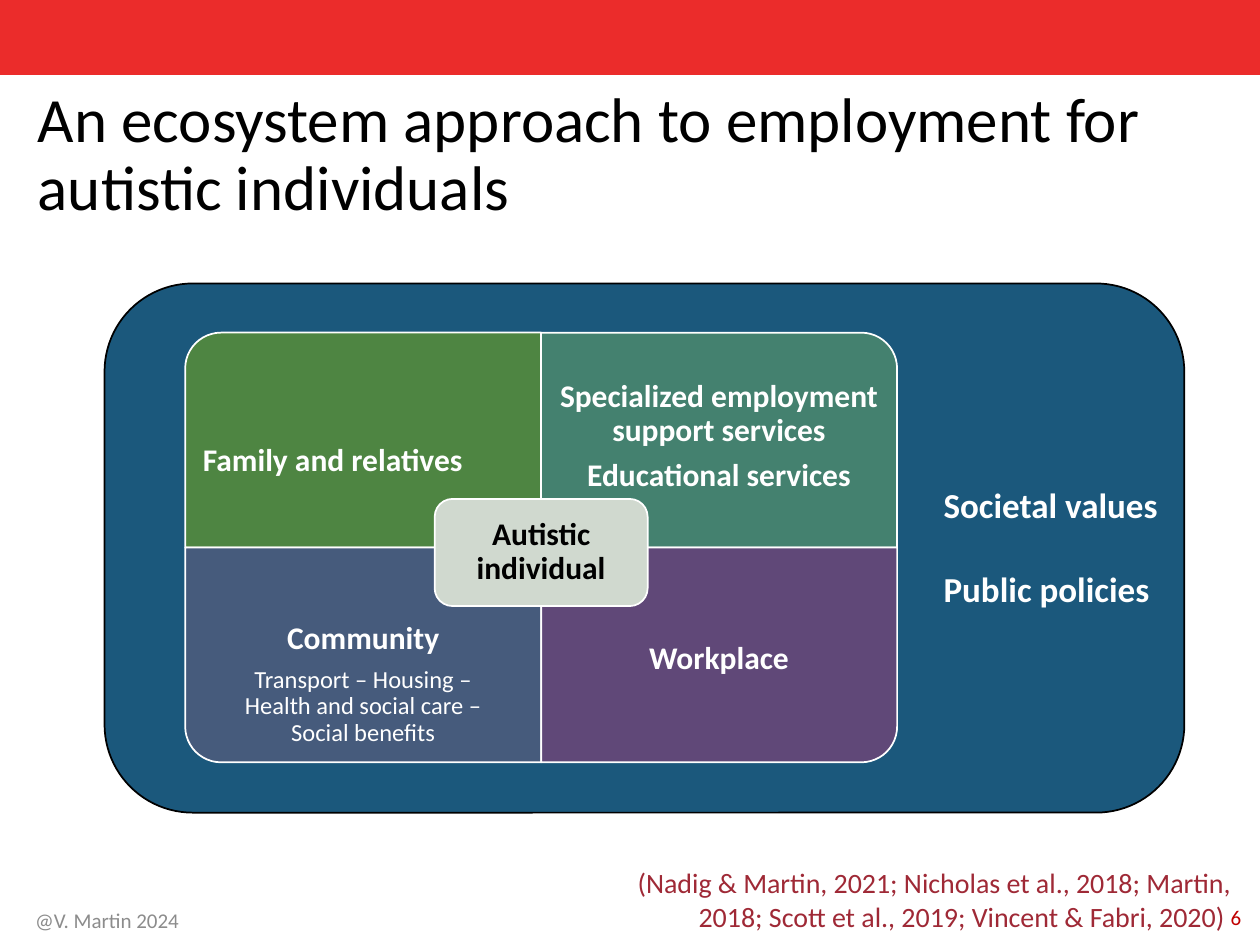
from dataclasses import dataclass

import pptx
import pptx.dml.color
import pptx.enum.shapes
import pptx.enum.text
import pptx.util

Inches = pptx.util.Inches
Pt = pptx.util.Pt
Shape = pptx.enum.shapes.MSO_SHAPE
Align = pptx.enum.text.PP_ALIGN
Anchor = pptx.enum.text.MSO_ANCHOR


@dataclass(frozen=True)
class Theme:
    font: str = "Calibri"
    black: str = "000000"
    white: str = "FFFFFF"
    banner: str = "EB2C2B"
    society: str = "1B587C"
    family: str = "4E8542"
    services: str = "44816F"
    community: str = "465B7C"
    workplace: str = "604878"
    individual: str = "D0D9CF"
    copyright: str = "8C8C8C"
    citation: str = "9F2936"
    page: str = "C00000"
    title_size: int = 36
    society_size: int = 20
    label_size: int = 18
    citation_size: int = 16
    detail_size: int = 14
    footer_size: int = 12


THEME = Theme()


def rgb(color):
    return pptx.dml.color.RGBColor.from_string(color)


def add_block(slide, kind, box, fill, line, rotation=0):
    """Draw a filled shape whose box is (left, top, width, height) as it appears after rotation."""
    left, top, width, height = box
    if rotation % 180:
        left, top = left + (width - height) / 2, top + (height - width) / 2
        width, height = height, width
    block = slide.shapes.add_shape(kind, *map(Inches, (left, top, width, height)))
    block.rotation = rotation
    block.shadow.inherit = False
    block.fill.solid()
    block.fill.fore_color.rgb = rgb(fill)
    block.line.color.rgb = rgb(line)
    block.line.width = Pt(1)
    return block


def style(paragraph, size, color, bold=False, align=Align.LEFT, spacing=None, before=0):
    paragraph.alignment = align
    paragraph.line_spacing = spacing
    paragraph.space_before = Pt(before)
    font = paragraph.font
    font.name, font.size, font.bold = THEME.font, Pt(size), bold
    font.color.rgb = rgb(color)


def add_text(slide, box, lines, color, anchor=Anchor.MIDDLE, inset=None, gap=0, **look):
    """Write (text, size, bold) lines in a wrapping text box, gap points apart."""
    frame = slide.shapes.add_textbox(*map(Inches, box)).text_frame
    frame.word_wrap = True
    frame.vertical_anchor = anchor
    if inset is not None:
        frame.margin_left = frame.margin_right = Inches(inset)
        frame.margin_top = frame.margin_bottom = Inches(inset)
    for index, (text, size, bold) in enumerate(lines):
        paragraph = frame.add_paragraph() if index else frame.paragraphs[0]
        paragraph.text = text
        style(paragraph, size, color, bold, before=gap if index else 0, **look)


def add_heading(slide, box):
    title = slide.shapes.title
    title.left, title.top, title.width, title.height = map(Inches, box)
    frame = title.text_frame
    frame.text = "An ecosystem approach to employment for autistic individuals"
    frame.auto_size = pptx.enum.text.MSO_AUTO_SIZE.NONE
    frame.vertical_anchor = Anchor.TOP
    style(frame.paragraphs[0], THEME.title_size, THEME.black, spacing=0.9)


def add_matrix(slide, box):
    """Four quadrants, rounded at their outer corners, around the central individual."""
    left, top, width, height = box
    cell_width, cell_height = width / 2, height / 2
    label, detail = THEME.label_size, THEME.detail_size
    # column, row, rotation, fill, alignment, text centre below the matrix top, lines
    quadrants = [
        (0, 0, 270, THEME.family, Align.LEFT, 1.02, [("Family and relatives", label, True)]),
        (1, 0, 0, THEME.services, Align.CENTER, 0.83,
         [("Specialized employment support services", label, True),
          ("Educational services", label, True)]),
        (0, 1, 180, THEME.community, Align.CENTER, 2.79,
         [("Community", label, True),
          ("Transport – Housing –\vHealth and social care –\vSocial benefits", detail, False)]),
        (1, 1, 90, THEME.workplace, Align.CENTER, 2.59, [("Workplace", label, True)]),
    ]
    text_height = 1.28
    for column, row, rotation, fill, align, centre, lines in quadrants:
        x, y = left + column * cell_width, top + row * cell_height
        add_block(slide, Shape.ROUND_1_RECTANGLE, (x, y, cell_width, cell_height),
                  fill, THEME.white, rotation)
        add_text(slide, (x, top + centre - text_height / 2, cell_width, text_height), lines,
                 THEME.white, inset=0.14, gap=6.3, align=align, spacing=0.9)

    core_width, core_height = 1.69, 0.85
    core = (left + (width - core_width) / 2, top + 1.32, core_width, core_height)
    add_block(slide, Shape.ROUNDED_RECTANGLE, core, THEME.individual, THEME.white)
    add_text(slide, core, [("Autistic individual", label, True)], THEME.black,
             inset=0.11, align=Align.CENTER, spacing=0.9)


def add_ecosystem(slide, box):
    left, top, width, height = box
    add_block(slide, Shape.ROUNDED_RECTANGLE, box, THEME.society, THEME.black)
    add_matrix(slide, (left + 0.64, top + 0.39, 5.65, 3.41))
    add_text(slide, (left + 6.56, top + 1.54, 1.98, 1.11),
             [(text, THEME.society_size, True) for text in ("Societal values", "Public policies")],
             THEME.white, anchor=Anchor.TOP, gap=24)


def add_footer(slide, box):
    left, top, width, height = box
    small = THEME.footer_size
    add_text(slide, (left, top + 0.28, 3.38, 0.4), [("@V. Martin 2024", small, False)],
             THEME.copyright)
    citation = ("(Nadig & Martin, 2021; Nicholas et al., 2018; Martin, 2018; "
                "Scott et al., 2019; Vincent & Fabri, 2020) ")
    add_text(slide, (left + 4.23, top, 5.46, 0.64),
             [(citation, THEME.citation_size, False)], THEME.citation,
             anchor=Anchor.TOP, align=Align.RIGHT)
    add_text(slide, (left + width - 2.25, top + 0.26, 2.25, 0.4), [("6", small, False)],
             THEME.page, align=Align.RIGHT)


def main():
    deck = pptx.Presentation()
    deck.slide_width, deck.slide_height = Inches(10), Inches(7.5)
    slide = deck.slides.add_slide(deck.slide_layouts.get_by_name("Title Only"))
    add_block(slide, Shape.RECTANGLE, (0, 0, 10, 0.59), THEME.banner, THEME.banner)
    add_heading(slide, (0.2, 0.65, 8.98, 1.5))
    add_ecosystem(slide, (0.83, 2.25, 8.57, 4.2))
    add_footer(slide, (0.18, 6.82, 9.77, 0.68))
    deck.save("out.pptx")


if __name__ == "__main__":
    main()
